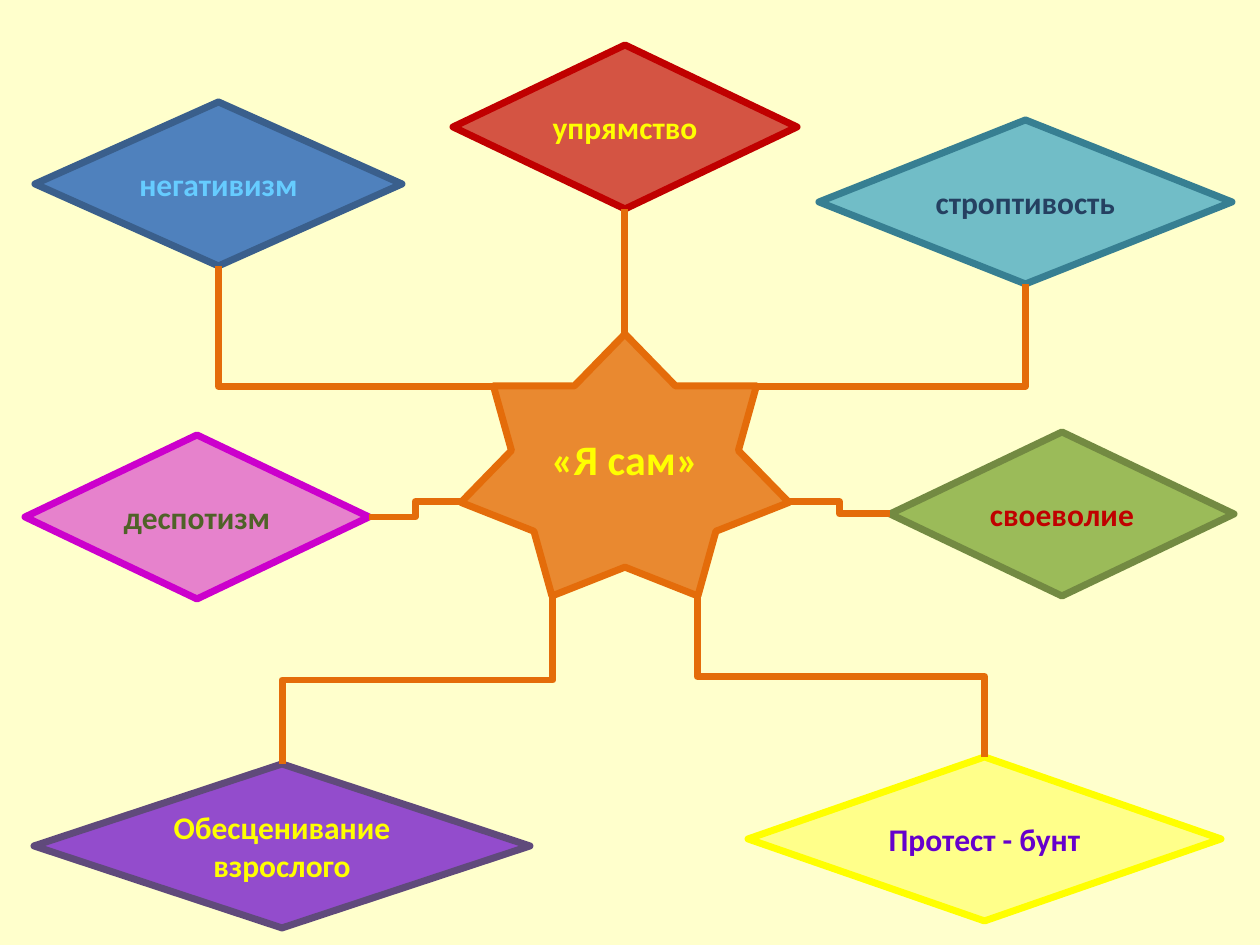
"""Build a one-slide diagram: a central star linked to seven labelled diamonds."""
import lxml.etree
import pptx
import pptx.dml.color
import pptx.enum.shapes
import pptx.enum.text
import pptx.oxml.ns
import pptx.util

SHAPES = pptx.enum.shapes.MSO_SHAPE
CONNECTORS = pptx.enum.shapes.MSO_CONNECTOR
EMU_PER_PX = 914400 / 126
PAGE_SIZE = (1260, 945)
DIAMOND_HEIGHT = 164
TOP, LEFT, BOTTOM, RIGHT = range(4)

THEME = {
    "font": "Calibri",
    "background": "FFFFCC",
    "accent": "E46C0A",
    "line_width": 4,
    "star_size": 24,
    "label_size": 18,
}

STAR = {
    "text": "«Я сам»", "box": (461, 334, 328, 262),
    "fill": "E46C0A", "opacity": 80, "line": "E46C0A", "color": "FFFF00",
}

DIAMONDS = [
    {"text": "упрямство", "at": (453, 45), "width": 344,
     "fill": "C00000", "opacity": 67, "line": "C00000", "color": "FFFF00",
     "tip": (0.5, 0), "site": BOTTOM, "route": "straight"},
    {"text": "негативизм", "at": (35, 102), "width": 367,
     "fill": "4F81BD", "opacity": 100, "line": "3A5F8C", "color": "66CCFF",
     "tip": (0.1, 0.2), "site": BOTTOM, "route": "corner"},
    {"text": "строптивость", "at": (819, 120), "width": 413,
     "fill": "4BACC6", "opacity": 79, "line": "377F92", "color": "254061",
     "tip": (0.9, 0.2), "site": BOTTOM, "route": "corner"},
    {"text": "деспотизм", "at": (25, 435), "width": 344,
     "fill": "CC00CC", "opacity": 49, "line": "CC00CC", "color": "4F6228",
     "tip": (0, 0.64), "site": RIGHT, "route": "across"},
    {"text": "своеволие", "at": (890, 432), "width": 344,
     "fill": "9BBB59", "opacity": 100, "line": "738A42", "color": "C00000",
     "tip": (1, 0.64), "site": LEFT, "route": "across"},
    {"text": "Обесценивание взрослого", "at": (34, 764), "width": 496,
     "fill": "6600CC", "opacity": 70, "line": "604A7B", "color": "FFFF00",
     "tip": (0.28, 1), "site": TOP, "route": "down"},
    {"text": "Протест - бунт", "at": (748, 757), "width": 473,
     "fill": "FFFF00", "opacity": 32, "line": "FFFF00", "color": "6600CC",
     "tip": (0.72, 1), "site": TOP, "route": "down"},
]


def px(value):
    return pptx.util.Emu(round(value * EMU_PER_PX))


def rgb(value):
    return pptx.dml.color.RGBColor.from_string(value)


def add_element(parent, tag):
    return lxml.etree.SubElement(parent, pptx.oxml.ns.qn(tag))


def style_line(line, color):
    line.color.rgb = rgb(color)
    line.width = pptx.util.Pt(THEME["line_width"])


def add_node(page, kind, bounds, node, size):
    shape = page.shapes.add_shape(kind, *map(px, bounds))
    shape.shadow.inherit = False
    shape.fill.solid()
    shape.fill.fore_color.rgb = rgb(node["fill"])
    if node["opacity"] < 100:
        properties = shape._element.spPr
        color = properties.find(".//" + pptx.oxml.ns.qn("a:srgbClr"))
        add_element(color, "a:alpha").set("val", str(node["opacity"] * 1000))
    style_line(shape.line, node["line"])

    frame = shape.text_frame
    frame.word_wrap = True
    frame.vertical_anchor = pptx.enum.text.MSO_ANCHOR.MIDDLE
    para = frame.paragraphs[0]
    para.text = node["text"]
    para.alignment = pptx.enum.text.PP_ALIGN.CENTER
    para.font.name = THEME["font"]
    para.font.size = pptx.util.Pt(size)
    para.font.bold = True
    para.font.color.rgb = rgb(node["color"])
    return shape


def site_point(bounds, site):
    left, top, width, height = bounds
    across, down = [(0.5, 0), (0, 0.5), (0.5, 1), (1, 0.5)][site]
    return left + across * width, top + down * height


def add_link(page, node, shape, bounds):
    left, top, width, height = STAR["box"]
    start_x = left + node["tip"][0] * width
    start_y = top + node["tip"][1] * height
    end_x, end_y = site_point(bounds, node["site"])
    route = node["route"]
    kind = CONNECTORS.STRAIGHT if route == "straight" else CONNECTORS.ELBOW
    ends = (start_x, start_y, end_x, end_y)
    if route == "down":
        middle_x, middle_y = (start_x + end_x) / 2, (start_y + end_y) / 2
        half_x, half_y = (end_x - start_x) / 2, (end_y - start_y) / 2
        ends = (middle_x - half_y, middle_y + half_x,
                middle_x + half_y, middle_y - half_x)

    link = page.shapes.add_connector(kind, *map(px, ends))
    properties = link._element.spPr
    if route == "down":
        properties.find(pptx.oxml.ns.qn("a:xfrm")).set("rot", str(90 * 60000))
    else:
        link.end_connect(shape, node["site"])
    if route == "corner":
        properties.find(pptx.oxml.ns.qn("a:prstGeom")).set("prst", "bentConnector2")
    style_line(link.line, THEME["accent"])
    add_element(properties, "a:effectLst")


def main():
    deck = pptx.Presentation()
    deck.slide_width, deck.slide_height = map(px, PAGE_SIZE)
    page = deck.slides.add_slide(deck.slide_layouts[6])
    page.background.fill.solid()
    page.background.fill.fore_color.rgb = rgb(THEME["background"])

    add_node(page, SHAPES.STAR_7_POINT, STAR["box"], STAR, THEME["star_size"])
    placed = []
    for node in DIAMONDS:
        bounds = (*node["at"], node["width"], DIAMOND_HEIGHT)
        shape = add_node(page, SHAPES.FLOWCHART_DECISION, bounds, node,
                         THEME["label_size"])
        placed.append((node, shape, bounds))
    for node, shape, bounds in placed:
        add_link(page, node, shape, bounds)

    deck.save("out.pptx")


if __name__ == "__main__":
    main()
